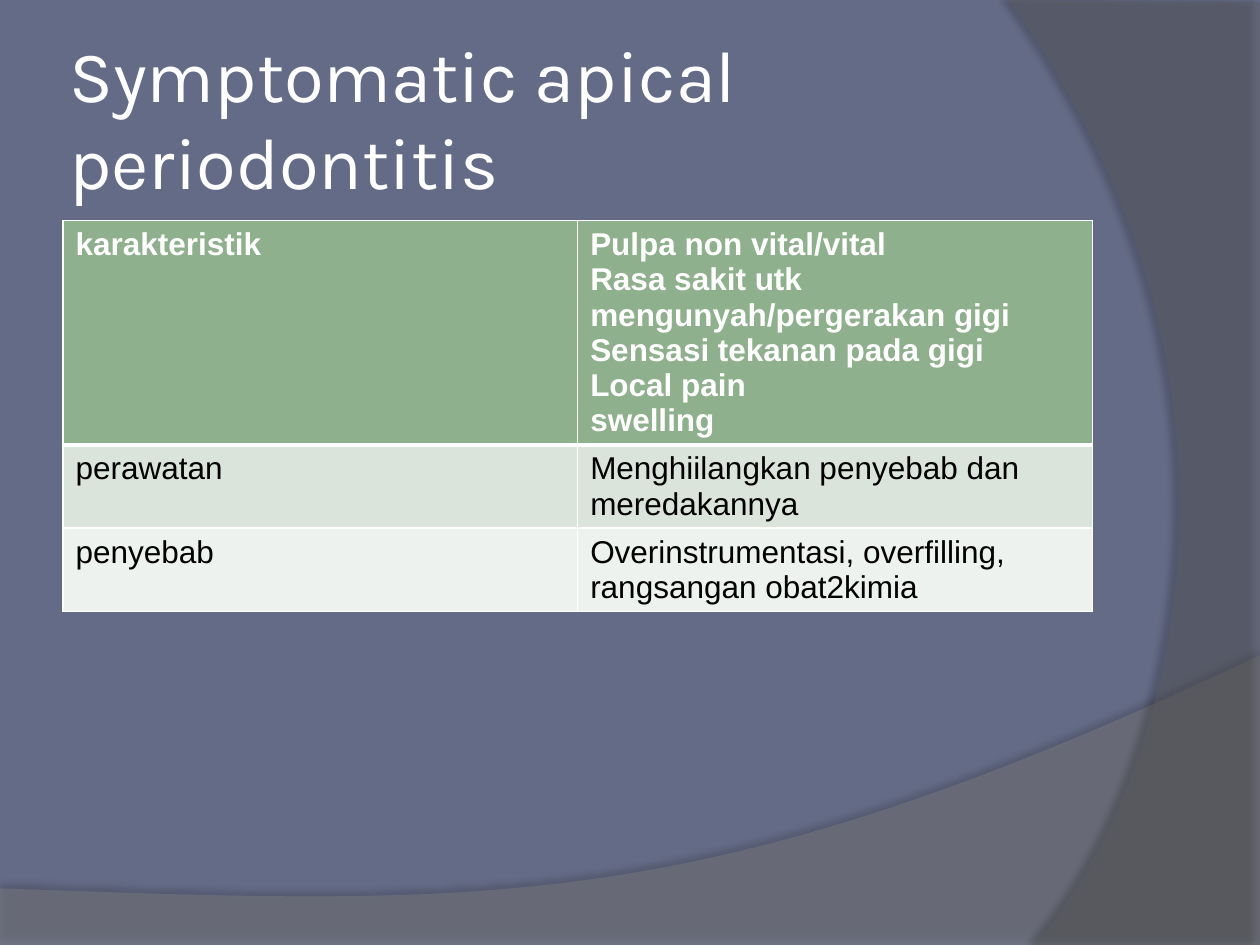
from lxml.etree import SubElement
from pptx import Presentation
from pptx.dml.color import RGBColor
from pptx.enum.text import MSO_ANCHOR as Anchor, MSO_AUTO_SIZE as AutoSize, PP_ALIGN as Align
from pptx.oxml.ns import qn
from pptx.util import Cm, Pt

WHITE, BLACK = "FFFFFF", "000000"
TABLE_ROWS = [
    (["karakteristik"],
     ["Pulpa non vital/vital", "Rasa sakit utk mengunyah/pergerakan gigi",
      "Sensasi tekanan pada gigi", "Local pain", "swelling"]),
    (["perawatan"], ["Menghiilangkan penyebab dan meredakannya"]),
    (["penyebab"], ["Overinstrumentasi, overfilling, rangsangan obat2kimia"]),
]
ROW_FILLS = ["8FB08C", "DBE4DA", "EEF2EE"]


def color(value):
    return RGBColor.from_string(value)


def set_fill(fill, value):
    fill.solid()
    fill.fore_color.rgb = color(value)


def add_run(paragraph, text, size, font, value, bold=False):
    run = paragraph.add_run()
    run.text = text
    run.font.size, run.font.name, run.font.bold = Pt(size), font, bold
    run.font.color.rgb = color(value)


def add_alpha(color_element, percent):
    SubElement(color_element, qn("a:alpha"), val=str(percent * 1000))


def bezier(start, control_1, control_2, end, steps=60):
    """Return the points of a cubic curve after its start."""
    points = []
    for step in range(1, steps + 1):
        t = step / steps
        weights = ((1 - t) ** 3, 3 * t * (1 - t) ** 2, 3 * t * t * (1 - t), t ** 3)
        points.append(tuple(
            sum(weight * value for weight, value in zip(weights, values))
            for values in zip(start, control_1, control_2, end)))
    return points


def add_swoosh(slide, corners, curve, fill, opacity, shadow):
    """Add a translucent panel whose last side is a curve, behind the content."""
    points = [(Cm(x), Cm(y)) for x, y in corners + bezier(corners[-1], *curve)]
    builder = slide.shapes.build_freeform(*points[0], scale=1.0)
    builder.add_line_segments(points[1:], close=True)
    shape = builder.convert_to_shape()
    set_fill(shape.fill, fill)
    shape.line.fill.background()
    properties = shape._element.spPr
    add_alpha(properties.find(f".//{qn('a:srgbClr')}"), opacity)

    # Soft shadow
    distance, direction, strength = shadow
    effects = SubElement(properties, qn("a:effectLst"))
    outer = SubElement(effects, qn("a:outerShdw"), blurRad=str(Pt(4)),
                       dist=str(Pt(distance)), dir=str(direction * 60000),
                       algn="ctr", rotWithShape="0")
    add_alpha(SubElement(outer, qn("a:srgbClr"), val=BLACK), strength)

    # Move below the title
    title = slide.shapes.title._element
    title.addprevious(shape._element)


def set_title(slide, text):
    title = slide.shapes.title
    title.left, title.top, title.width, title.height = Cm(1.27), Cm(0.76), Cm(20.75), Cm(3.18)
    frame = title.text_frame
    frame.word_wrap, frame.auto_size = True, AutoSize.NONE
    frame.vertical_anchor = Anchor.MIDDLE
    frame.margin_left = frame.margin_right = Cm(0.13)
    frame.margin_top = frame.margin_bottom = Cm(0.13)
    paragraph = frame.paragraphs[0]
    paragraph.alignment = Align.LEFT
    add_run(paragraph, text, 41.4, "Karla", WHITE)


def set_borders(cell, bottom):
    properties = cell._tc.get_or_add_tcPr()
    sides = [("L", 1), ("R", 1), ("T", 1), ("B", bottom)]
    for index, (side, width) in enumerate(sides):
        line = SubElement(properties, qn(f"a:ln{side}"), w=str(Pt(width)))
        solid = SubElement(line, qn("a:solidFill"))
        SubElement(solid, qn("a:srgbClr"), val=WHITE)
        properties.insert(index, line)  # borders come before the fill


def fill_cell(cell, lines, fill, header):
    set_fill(cell.fill, fill)
    set_borders(cell, 3 if header else 1)
    frame = cell.text_frame
    for index, text in enumerate(lines):
        paragraph = frame.add_paragraph() if index else frame.paragraphs[0]
        add_run(paragraph, text, 18, "Arial", WHITE if header else BLACK, header)


def add_facts_table(slide):
    row_height = Cm(1.03)
    table = slide.shapes.add_table(len(TABLE_ROWS), 2, Cm(1.27), Cm(4.45), Cm(20.75),
                                   row_height * len(TABLE_ROWS)).table
    for row, (contents, fill) in enumerate(zip(TABLE_ROWS, ROW_FILLS)):
        for column, lines in enumerate(contents):
            fill_cell(table.cell(row, column), lines, fill, header=row == 0)


def main():
    presentation = Presentation()
    presentation.slide_width, presentation.slide_height = Cm(25.4), Cm(19.05)
    slide = presentation.slides.add_slide(presentation.slide_layouts[5])
    set_fill(slide.background.fill, "646B86")

    # Bottom wave and right-hand arc
    add_swoosh(slide, [(0, 17.91), (0, 19.05), (25.4, 19.05), (25.4, 13.21)],
               [(14.2, 18.52), (9.93, 18.26), (0, 17.91)], "7F7F7F", 45, (3.5, 270, 35))
    add_swoosh(slide, [(25.4, 0.05), (25.4, 19.05), (20.85, 19.05)],
               [(23.75, 15.72), (25.86, 7.62), (20.32, 0)], "5E5E5E", 40, (4, 180, 45))

    # Content
    set_title(slide, "Symptomatic apical periodontitis")
    add_facts_table(slide)
    presentation.save("out.pptx")


if __name__ == "__main__":
    main()
